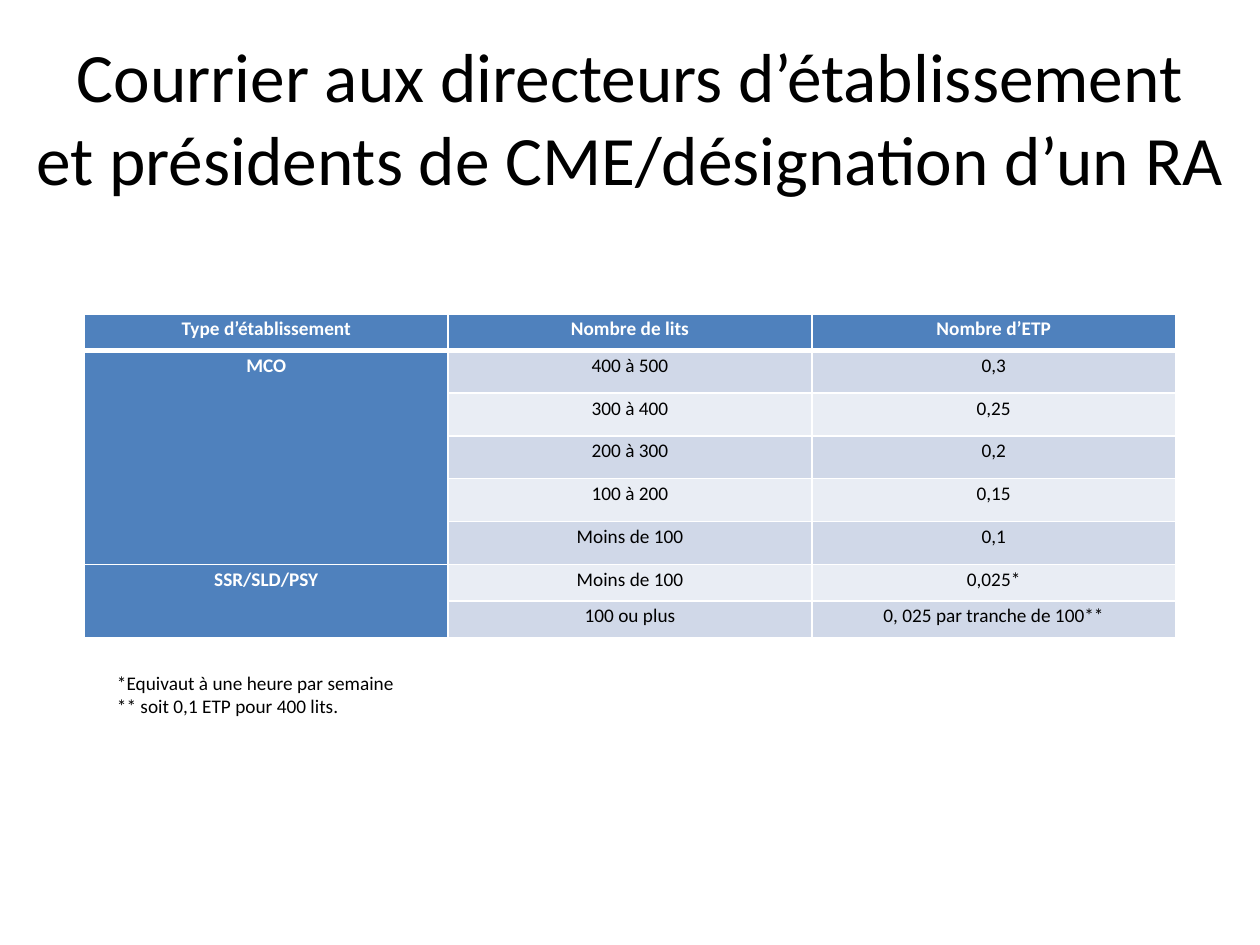
from pptx import Presentation
from pptx.dml.color import RGBColor
from pptx.enum.text import MSO_ANCHOR, MSO_AUTO_SIZE, PP_ALIGN
from pptx.oxml.ns import qn
from pptx.util import Inches, Pt
from lxml.etree import SubElement

BLACK = RGBColor(0x00, 0x00, 0x00)
WHITE = RGBColor(0xFF, 0xFF, 0xFF)
BLUE = RGBColor(0x4F, 0x81, 0xBD)
BANDS = (RGBColor(0xD0, 0xD8, 0xE8), RGBColor(0xE9, 0xED, 0xF4))

HEADINGS = ("Type d’établissement", "Nombre de lits", "Nombre d’ETP")
STAFFING = {
    "MCO": [
        ("400 à 500", "0,3"),
        ("300 à 400", "0,25"),
        ("200 à 300", "0,2"),
        ("100 à 200", "0,15"),
        ("Moins de 100", "0,1"),
    ],
    "SSR/SLD/PSY": [
        ("Moins de 100", "0,025*"),
        ("100 ou plus", "0, 025 par tranche de 100**"),
    ],
}
ROW_HEIGHTS = [0.29] + [0.34] * 5 + [0.29] * 2


class SlideBuilder:
    """Holds the style and the current slide; boxes are shares of its size."""

    font_name = "Calibri"
    title_size = 39.6
    text_size = 11
    cell_format = {
        "margin_left": Inches(0.07),
        "margin_right": Inches(0.07),
        "margin_top": 0,
        "margin_bottom": 0,
    }

    def __init__(self, width, height):
        self.deck = Presentation()
        self.deck.slide_width = Inches(width)
        self.deck.slide_height = Inches(height)
        self.slide = self.deck.slides.add_slide(self.deck.slide_layouts[5])

    def box(self, left, top, width, height):
        across, down = self.deck.slide_width, self.deck.slide_height
        return (round(left * across), round(top * down),
                round(width * across), round(height * down))

    def fill_text(self, frame, text, size, color=BLACK, bold=False, **paragraph_format):
        frame.text = text
        for paragraph in frame.paragraphs:
            for name, value in paragraph_format.items():
                setattr(paragraph, name, value)
            for run in paragraph.runs:
                font_format = {"name": self.font_name, "size": Pt(size), "bold": bold}
                for name, value in font_format.items():
                    setattr(run.font, name, value)
                run.font.color.rgb = color

    def title(self, text, *shares):
        heading = self.slide.shapes.title
        place = zip(("left", "top", "width", "height"), self.box(*shares))
        for name, value in place:
            setattr(heading, name, value)
        frame = heading.text_frame
        frame.word_wrap = True
        frame.auto_size = MSO_AUTO_SIZE.NONE
        frame.vertical_anchor = MSO_ANCHOR.MIDDLE
        self.fill_text(frame, text, self.title_size, alignment=PP_ALIGN.CENTER)

    def note(self, text, *shares):
        frame = self.slide.shapes.add_textbox(*self.box(*shares)).text_frame
        frame.word_wrap = True
        frame.auto_size = MSO_AUTO_SIZE.SHAPE_TO_FIT_TEXT
        frame.vertical_anchor = MSO_ANCHOR.MIDDLE
        self.fill_text(frame, text, self.text_size)

    def cell(self, cell, text, fill, color=BLACK, bold=False, bottom=1):
        for name, value in self.cell_format.items():
            setattr(cell, name, value)
        self.fill_text(cell.text_frame, text, self.text_size, color, bold,
                       alignment=PP_ALIGN.CENTER, line_spacing=1.15)
        cell.fill.solid()
        cell.fill.fore_color.rgb = fill
        # Borders come before the fill in the cell properties
        properties = cell._tc.get_or_add_tcPr()
        sides = {"a:lnL": 1, "a:lnR": 1, "a:lnT": 1, "a:lnB": bottom}
        for position, (side, points) in enumerate(sides.items()):
            line = SubElement(properties, qn(side), w=str(Pt(points)))
            color_fill = SubElement(line, qn("a:solidFill"))
            SubElement(color_fill, qn("a:srgbClr"), val=str(WHITE))
            properties.insert(position, line)

    def staffing_table(self, headings, groups, heights, *shares):
        table = self.slide.shapes.add_table(
            len(heights), len(headings), *self.box(*shares)).table
        for row, height in zip(table.rows, heights):
            row.height = Inches(height)

        # Header row
        for column, heading in enumerate(headings):
            self.cell(table.cell(0, column), heading, BLUE, WHITE, True, bottom=3)

        # One merged label per kind of establishment, banded values beside it
        row = 1
        for kind, lines in groups.items():
            first = row
            for values in lines:
                label = kind if row == first else ""
                # The first row shares the thick rule under the header
                self.cell(table.cell(row, 0), label, BLUE, WHITE, True)
                for column, value in enumerate(values, start=1):
                    self.cell(table.cell(row, column), value, BANDS[(row - 1) % 2])
                row += 1
            table.cell(first, 0).merge(table.cell(row - 1, 0))


def main():
    builder = SlideBuilder(10, 7.5)
    builder.title(
        "Courrier aux directeurs d’établissement\v"
        "et présidents de CME/désignation d’un RA",
        0.012, 0.04, 0.976, 0.167)
    builder.staffing_table(HEADINGS, STAFFING, ROW_HEIGHTS,
                           0.067, 0.332, 0.866, 0.345)
    builder.note("*Equivaut à une heure par semaine\n** soit 0,1 ETP pour 400 lits.",
                 0.083, 0.703, 0.858, 0.063)
    builder.deck.save("out.pptx")


if __name__ == "__main__":
    main()
